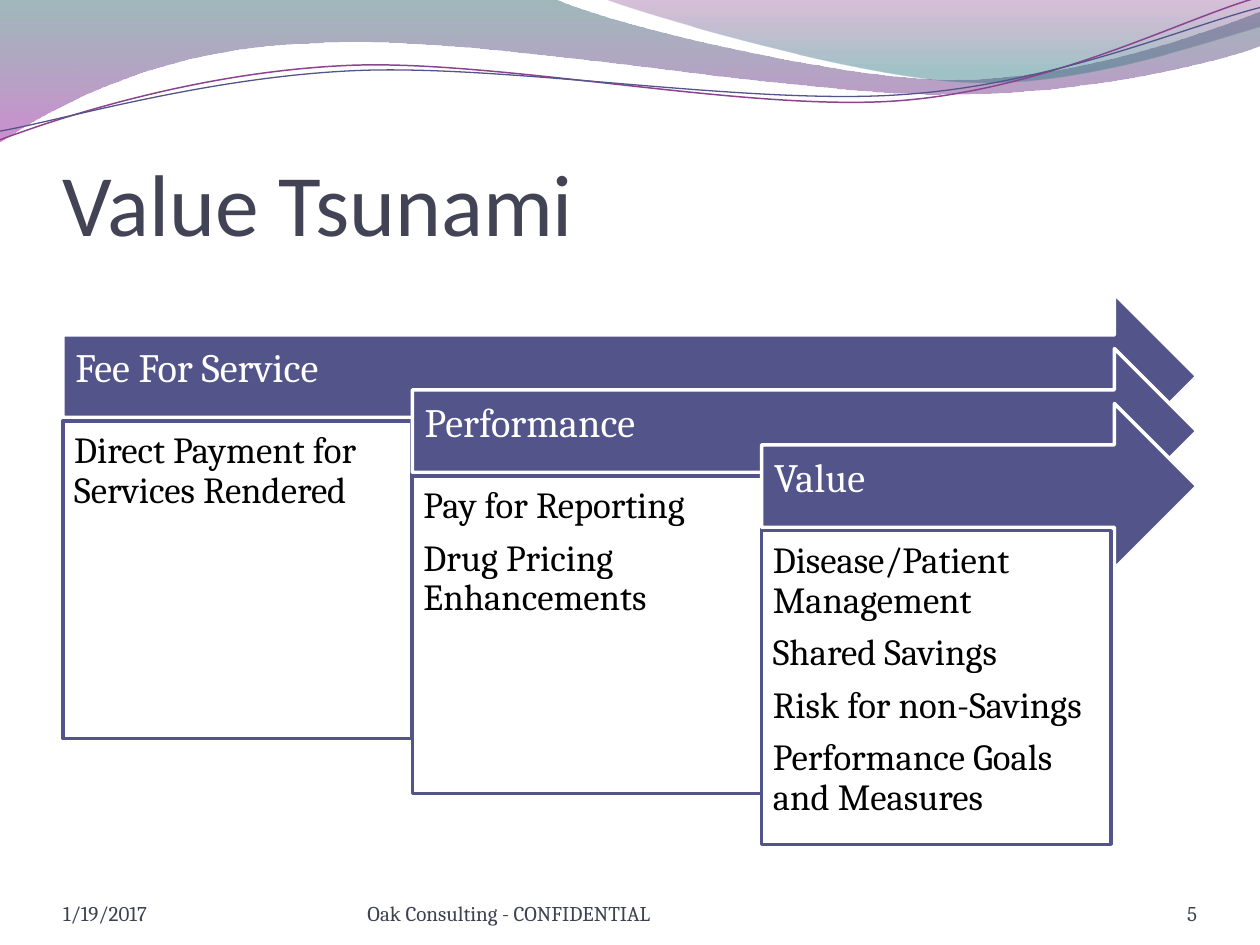
from lxml import etree
from pptx import Presentation
from pptx.dml.color import RGBColor
from pptx.enum.shapes import MSO_SHAPE
from pptx.enum.text import MSO_ANCHOR, PP_ALIGN
from pptx.oxml.ns import qn
from pptx.util import Pt

COLORS = {
    "indigo": "53548A", "white": "FFFFFF", "black": "000000",
    "title": "424456", "footer": "3F4152", "plum": "8D4490",
    "deep teal": "2D6368", "violet": "A530A9",
    "purple": "7F2F82", "teal": "2F7B82",
}

STAGES = [
    ("Fee For Service", ["Direct Payment for Services Rendered"], 181.6),
    ("Performance", ["Pay for Reporting", "Drug Pricing Enhancements"], 181.6),
    ("Value", ["Disease/Patient Management", "Shared Savings",
               "Risk for non-Savings", "Performance Goals and Measures"], 179.2),
]

# text, left, width, alignment
FOOTERS = [
    ("1/19/2017", 36, 168, PP_ALIGN.LEFT),
    ("Oak Consulting - CONFIDENTIAL", 210, 264, PP_ALIGN.LEFT),
    ("5", 624, 60, PP_ALIGN.RIGHT),
]

# Wave outlines in points: a pair is a straight step, six numbers are a Bezier step.
# Gradient stops: position, color, opacity in percent.
BANDS = [
    ([(0, 0), (316.8, -0.7), (342.7, 12.2, 478.1, 45.4, 545.8, 45.4),
      (614.2, 45.4, 689.8, 18.7, 720, 6.5), (720.7, 25.9),
      (707.8, 31.7, 626.4, 54.7, 537.1, 54), (447.8, 54, 275, 20.2, 185, 24.5),
      (92.9, 25.9, 33.1, 59.8, -0.7, 81.4)],
     [(0, "deep teal", 45), (1, "violet", 55)]),
    ([(344.9, -0.7), (366.5, 7.9, 491, 44.6, 553.7, 46.8),
      (616.3, 49.7, 691.9, 23, 720, 15.1), (720, 0)],
     [(0, "purple", 30), (0.8, "teal", 45)]),
]
STRANDS = [
    ([(0, 79.9), (34.6, 67, 113.8, 41, 199.4, 37.4),
      (284.4, 33.8, 427, 64.1, 513.4, 57.6),
      (599.8, 51.1, 675.4, 10.8, 718.6, -1.4)], "plum", 0.85),
    ([(0, 74.9), (33.8, 69.1, 118.1, 43.9, 203.8, 40.3),
      (290.2, 36.7, 429.8, 60.5, 516.2, 54),
      (601.9, 48.2, 677.5, 15.1, 720, 4.3)], "indigo", 0.75),
]

LEFT, RIGHT, TOP = 36, 684, 167.8
COLUMN, DROP = 199.6, 31.4
ARROW_HEIGHT, CARD_OFFSET = 94.4, 72.7


def rgb(name):
    return RGBColor.from_string(COLORS[name])


def add_wave(page, steps, close):
    """Draw through all step points, then merge each Bezier's three into one curve."""
    points = [(Pt(x), Pt(y)) for step in steps for x, y in zip(step[::2], step[1::2])]
    builder = page.shapes.build_freeform(*points[0], scale=1.0)
    builder.add_line_segments(points[1:], close=close)
    wave = builder.convert_to_shape()
    wave.shadow.inherit = False
    segments = iter(list(wave._element.iter(qn("a:lnTo"))))
    for step in steps[1:]:
        segment = next(segments)
        if len(step) == 6:
            segment.tag = qn("a:cubicBezTo")
            for extra in (next(segments), next(segments)):
                segment.append(extra[0])
                extra.getparent().remove(extra)
    return wave


def add_band(page, steps, stops):
    band = add_wave(page, steps, True)
    band.line.fill.background()
    band.fill.gradient()
    band.fill.gradient_angle = 270
    for stop, (position, color, _) in zip(band.fill.gradient_stops, stops):
        stop.position = position
        stop.color.rgb = rgb(color)
    for node, (_, _, opacity) in zip(band._element.spPr.iter(qn("a:srgbClr")), stops):
        etree.SubElement(node, qn("a:alpha"), val=str(opacity * 1000))


def add_strand(page, steps, color, width):
    strand = add_wave(page, steps, False)
    strand.fill.background()
    strand.line.color.rgb = rgb(color)
    strand.line.width = Pt(width)


def write(shape, lines, font, size, color, insets, anchor,
          align=PP_ALIGN.LEFT, spacing=None):
    frame = shape.text_frame
    frame.word_wrap = True
    frame.vertical_anchor = anchor
    (frame.margin_left, frame.margin_top,
     frame.margin_right, frame.margin_bottom) = map(Pt, insets)
    frame.text = "\n".join(lines)
    for para in frame.paragraphs:
        para.alignment = align
        if spacing:
            para.line_spacing = spacing
            para.space_after = Pt(round(0.35 * size, 1))
        for span in para.runs:
            span.font.name = font
            span.font.size = Pt(size)
            span.font.color.rgb = rgb(color)


def add_block(page, kind, bounds, fill, line):
    block = page.shapes.add_shape(kind, *map(Pt, bounds))
    block.shadow.inherit = False
    block.fill.solid()
    block.fill.fore_color.rgb = rgb(fill)
    block.line.color.rgb = rgb(line)
    block.line.width = Pt(2)
    return block


def add_stage(page, index, heading, items, card_height):
    left, top = LEFT + index * COLUMN, TOP + index * DROP
    arrow = add_block(page, MSO_SHAPE.RIGHT_ARROW,
                      (left, top, RIGHT - left, ARROW_HEIGHT), "indigo", "white")
    write(arrow, [heading], "Cambria", 23, "white", (7.2, 7.2, 20, 15),
          MSO_ANCHOR.MIDDLE, spacing=0.9)
    card = add_block(page, MSO_SHAPE.RECTANGLE,
                     (left, top + CARD_OFFSET, COLUMN, card_height), "white", "indigo")
    write(card, items, "Cambria", 21, "black", (6.4, 6.4, 6.4, 6.4),
          MSO_ANCHOR.TOP, spacing=0.9)


def main():
    deck = Presentation()
    deck.slide_width, deck.slide_height = Pt(720), Pt(540)
    page = deck.slides.add_slide(deck.slide_layouts[6])

    for band in BANDS:
        add_band(page, *band)
    for strand in STRANDS:
        add_strand(page, *strand)

    title = page.shapes.add_textbox(Pt(LEFT), Pt(55.4), Pt(RIGHT - LEFT), Pt(90))
    write(title, ["Value Tsunami"], "Calibri", 50, "title", (0, 3.6, 0, 0),
          MSO_ANCHOR.BOTTOM)

    for index, stage in enumerate(STAGES):
        add_stage(page, index, *stage)

    for text, left, width, align in FOOTERS:
        box = page.shapes.add_textbox(Pt(left), Pt(500.4), Pt(width), Pt(28.8))
        write(box, [text], "Cambria", 12, "footer", (0, 0, 0, 0),
              MSO_ANCHOR.BOTTOM, align)

    deck.save("out.pptx")


if __name__ == "__main__":
    main()
